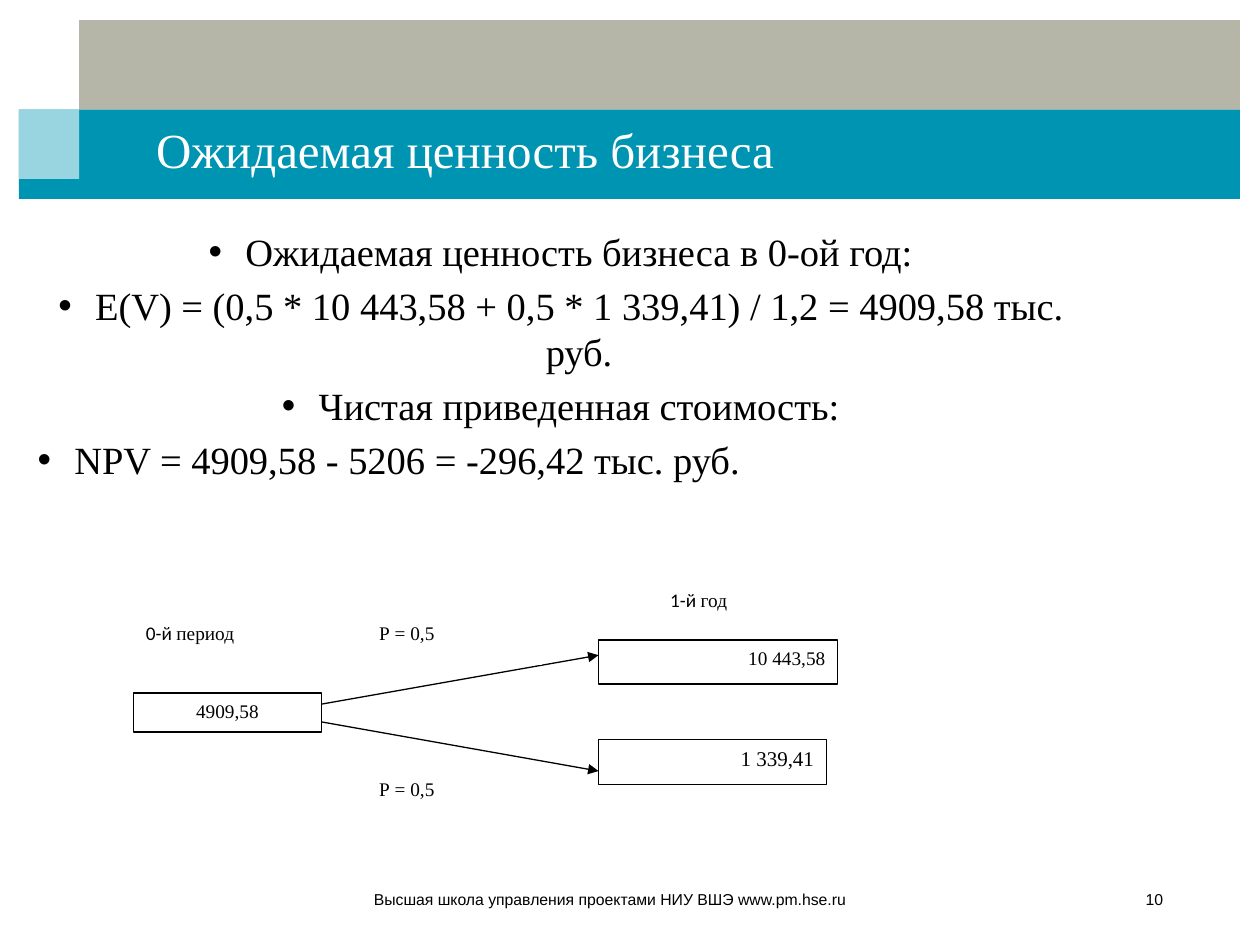
from lxml import etree
from pptx import Presentation
from pptx.dml.color import RGBColor
from pptx.enum.shapes import MSO_CONNECTOR, MSO_SHAPE
from pptx.enum.text import MSO_ANCHOR, PP_ALIGN
from pptx.oxml.ns import qn
from pptx.util import Pt

RECTANGLE = MSO_SHAPE.RECTANGLE
STRAIGHT = MSO_CONNECTOR.STRAIGHT
TOP, MIDDLE, BOTTOM = MSO_ANCHOR.TOP, MSO_ANCHOR.MIDDLE, MSO_ANCHOR.BOTTOM
LEFT, CENTER, RIGHT = PP_ALIGN.LEFT, PP_ALIGN.CENTER, PP_ALIGN.RIGHT
SERIF, SANS, LABEL_SANS = "Times New Roman", "Arial", "Calibri"
BLACK, WHITE, TEAL, PALE_TEAL, GREY = "000000", "FFFFFF", "0094B3", "99D4E1", "B5B5A8"


def paint(color_format, hex_color):
    """Set a fill, line or font colour from a hex string."""
    color_format.rgb = RGBColor.from_string(hex_color)


def style(font, size, name=SERIF, color=BLACK):
    """Set size, typeface and colour of a font."""
    font.size, font.name = Pt(size), name
    paint(font.color, color)


def add_rectangle(slide, box, fill, line=None):
    """Place a flat rectangle with an optional hairline and no shadow."""
    rectangle = slide.shapes.add_shape(RECTANGLE, *map(Pt, box))
    rectangle.shadow.inherit = False
    rectangle.fill.solid()
    paint(rectangle.fill.fore_color, fill)
    if line:
        paint(rectangle.line.color, line)
        rectangle.line.width = Pt(0.75)
    else:
        rectangle.line.fill.background()
    return rectangle


def add_text(slide, box, text, size, name=SERIF, color=BLACK, align=LEFT, anchor=TOP):
    """Place one line of text in a wrapping text box."""
    frame = slide.shapes.add_textbox(*map(Pt, box)).text_frame
    frame.word_wrap, frame.vertical_anchor = True, anchor
    paragraph = frame.paragraphs[0]
    paragraph.text, paragraph.alignment = text, align
    style(paragraph.font, size, name, color)


def add_header(slide, left, top, width, height):
    """Draw the two bands, the pale block and the title."""
    band, margin = height / 2, 34.5
    add_rectangle(slide, (left + margin, top, width - margin, band), GREY)
    add_rectangle(slide, (left, top + band, width, band), TEAL)
    add_rectangle(slide, (left, top + band, margin, 39.6), PALE_TEAL)
    add_text(slide, (left + 71.3, top + 18.5, 589.7, 75.6), "Ожидаемая ценность бизнеса",
             28, color=WHITE, anchor=BOTTOM)


def add_bullets(slide, left, top, width, height):
    """Write the bulleted calculation of value and NPV."""
    items = [
        ("Ожидаемая ценность бизнеса в 0-ой год:", CENTER),
        ("E(V) = (0,5 * 10 443,58 + 0,5 * 1 339,41) / 1,2 = 4909,58 тыс. руб.", CENTER),
        ("Чистая приведенная стоимость:", CENTER),
        ("NPV = 4909,58 - 5206 = -296,42 тыс. руб.", LEFT),
    ]
    frame = slide.shapes.add_textbox(Pt(left), Pt(top), Pt(width), Pt(height)).text_frame
    frame.word_wrap = True
    for index, (text, align) in enumerate(items):
        paragraph = frame.add_paragraph() if index else frame.paragraphs[0]
        paragraph.text, paragraph.alignment = text, align
        properties = paragraph._p.get_or_add_pPr()
        properties.set("marL", str(Pt(21)))
        properties.set("indent", str(-Pt(21)))
        etree.SubElement(properties, qn("a:buFont"), typeface=SANS)
        etree.SubElement(properties, qn("a:buChar"), char="•")
        paragraph.space_after = Pt(4.4)
        style(paragraph.font, 22)


def add_node(slide, box, runs, align=LEFT, size=11, line=WHITE):
    """Place a white box holding runs of (text, typeface)."""
    frame = add_rectangle(slide, box, WHITE, line).text_frame
    frame.word_wrap, frame.vertical_anchor = True, TOP
    paragraph = frame.paragraphs[0]
    paragraph.alignment = align
    style(paragraph.font, size)
    for text, name in runs:
        run = paragraph.add_run()
        run.text, run.font.name = text, name


def add_arrow(slide, start, end):
    """Draw a thin black arrow between two points."""
    arrow = slide.shapes.add_connector(STRAIGHT, *map(Pt, start + end))
    paint(arrow.line.color, BLACK)
    arrow.line.width = Pt(0.75)
    etree.SubElement(arrow.line._get_or_add_ln(), qn("a:tailEnd"), type="triangle")
    etree.SubElement(arrow._element.spPr, qn("a:effectLst"))


def add_tree(slide, left, top):
    """Draw the one-period probability tree."""
    branch_start, branch_end = left + 107.3, left + 265.7
    values = [
        ((0, 63.4, 107.3, 22.3), "4909,58", CENTER, 11),
        ((265.7, 33.1, 136.8, 25.2), "10 443,58", RIGHT, 11),
        ((265.7, 90, 130.3, 25.9), "1 339,41", RIGHT, 12),
    ]
    labels = [
        ((0, 18.7, 125.3, 23), [("0-й ", LABEL_SANS), ("период", SERIF)], LEFT),
        ((265.7, 0, 114.5, 26.6), [("1-й ", LABEL_SANS), ("год", SERIF)], CENTER),
        ((133.2, 18.7, 100.1, 28.1), [("Р = 0,5", SERIF)], LEFT),
        ((133.2, 108, 100.1, 28.1), [("Р = 0,5", SERIF)], LEFT),
    ]
    for (x, y, width, height), text, align, size in values:
        add_node(slide, (left + x, top + y, width, height), [(text, SERIF)], align, size, BLACK)
    for start_y, end_y in [(69.8, 41.8), (79.9, 108)]:
        add_arrow(slide, (branch_start, top + start_y), (branch_end, top + end_y))
    for (x, y, width, height), runs, align in labels:
        add_node(slide, (left + x, top + y, width, height), runs, align)


def add_footer(slide, left, top, width, height):
    """Write the school line and the page number."""
    number_width = 33.8
    for box, text in [
        ((left, top, 408.2, height), "Высшая школа управления проектами НИУ ВШЭ www.pm.hse.ru"),
        ((left + width - number_width, top, number_width, height), "10"),
    ]:
        add_text(slide, box, text, 9, SANS, align=RIGHT, anchor=MIDDLE)


def main():
    """Build the slide and save it."""
    presentation = Presentation()
    presentation.slide_width, presentation.slide_height = Pt(720), Pt(540)
    slide = presentation.slides.add_slide(presentation.slide_layouts[6])
    add_header(slide, 10.8, 11.5, 697.7, 102.2)
    add_bullets(slide, 14.4, 126.7, 612, 165.6)
    add_tree(slide, 76.3, 332.6)
    add_footer(slide, 82.1, 508.3, 589.7, 10.8)
    presentation.save("out.pptx")


if __name__ == "__main__":
    main()
